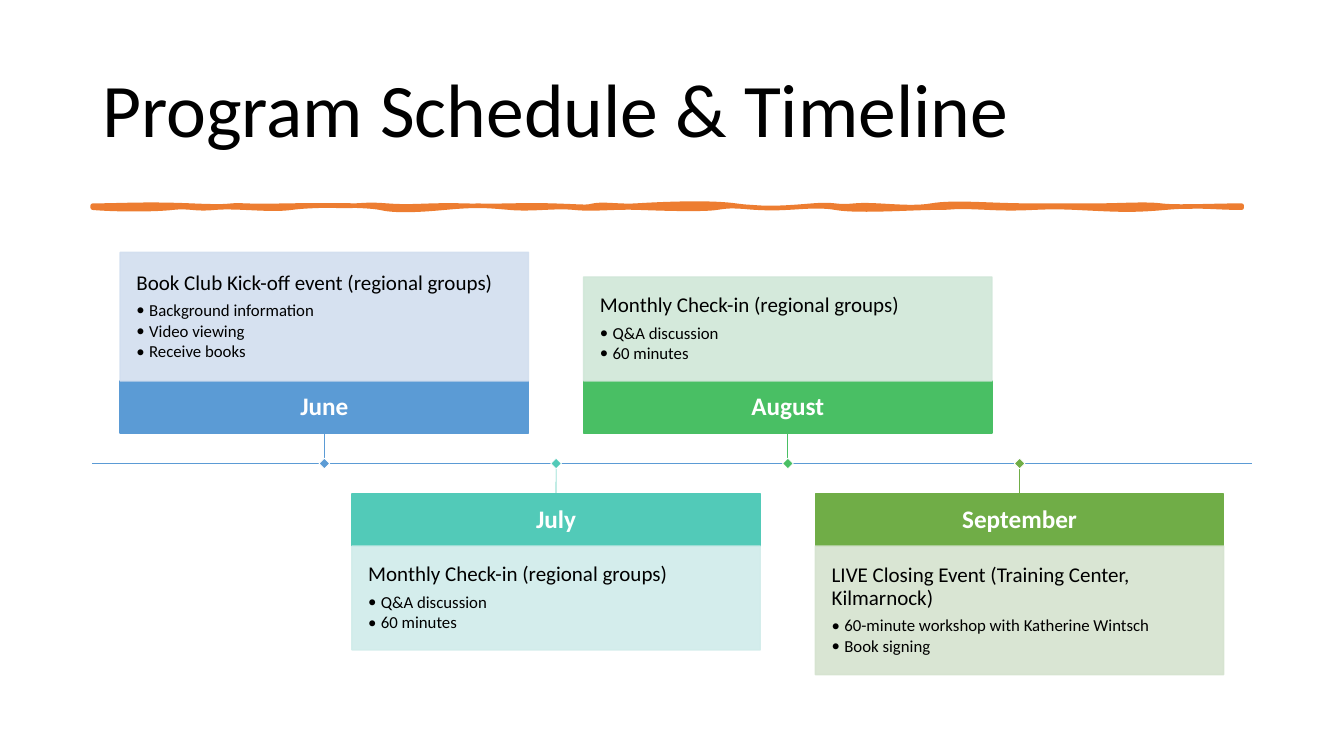
"""Build the program schedule and timeline slide."""
from dataclasses import dataclass

import lxml.etree
import pptx
import pptx.dml.color
import pptx.enum.shapes
import pptx.enum.text
import pptx.oxml.ns
import pptx.util
from pptx.util import Cm, Pt

RGB = pptx.dml.color.RGBColor
qn = pptx.oxml.ns.qn
ALIGN = pptx.enum.text.PP_ALIGN
MIDDLE = pptx.enum.text.MSO_ANCHOR.MIDDLE
RECTANGLE = pptx.enum.shapes.MSO_SHAPE.RECTANGLE
STRAIGHT = pptx.enum.shapes.MSO_CONNECTOR.STRAIGHT

FONT = "Calibri"
BLACK = RGB(0x00, 0x00, 0x00)
WHITE = RGB(0xFF, 0xFF, 0xFF)
ORANGE = RGB(0xED, 0x7D, 0x31)
BLUE = RGB(0x5B, 0x9B, 0xD5)
PALE_BLUE = RGB(0xD2, 0xDE, 0xEF)
TEAL = RGB(0x52, 0xCA, 0xB8)
PALE_TEAL = RGB(0xD0, 0xEC, 0xEA)
GREEN = RGB(0x49, 0xBF, 0x64)
PALE_GREEN = RGB(0xD0, 0xE7, 0xD8)
OLIVE = RGB(0x70, 0xAD, 0x47)
PALE_OLIVE = RGB(0xD5, 0xE3, 0xCF)

MARGIN, AXIS_WIDTH, AXIS_Y = 2.33, 29.21, 11.68
FIRST_LEFT, STEP, BOX_WIDTH = 3.03, 5.84, 10.29
MONTH_HEIGHT, STEM, MARKER = 1.31, 0.77, 0.19

BRUSH_UNIT = 0.0254
BRUSH_START = (92, 204)
BRUSH_CURVES = [
    (119, 204, 144, 202, 190, 204), (237, 206, 220, 203, 244, 204),
    (267, 205, 303, 203, 331, 204), (360, 205, 359, 202, 384, 204),
    (410, 206, 423, 203, 460, 204), (498, 205, 514, 203, 548, 204),
    (581, 205, 581, 206, 589, 204), (598, 202, 615, 205, 631, 204),
    (647, 203, 701, 200, 730, 204), (759, 208, 781, 206, 806, 204),
    (831, 202, 827, 206, 848, 204), (868, 202, 901, 208, 924, 204),
    (947, 200, 982, 204, 1023, 204), (1063, 204, 1063, 204, 1087, 204),
    (1112, 204, 1136, 202, 1152, 204), (1168, 206, 1203, 204, 1232, 204),
    (1232, 205, 1232, 205, 1232, 206), (1205, 206, 1189, 203, 1156, 206),
    (1122, 209, 1110, 208, 1068, 206), (1027, 204, 1023, 208, 981, 206),
    (939, 204, 952, 206, 928, 206), (904, 206, 851, 210, 829, 206),
    (806, 202, 782, 208, 753, 206), (724, 204, 725, 204, 711, 206),
    (698, 208, 661, 207, 635, 206), (609, 205, 590, 208, 570, 206),
    (551, 204, 528, 208, 506, 206), (483, 204, 473, 203, 441, 206),
    (409, 209, 390, 209, 377, 206), (363, 203, 310, 203, 289, 206),
    (268, 209, 235, 204, 213, 206), (192, 208, 189, 204, 171, 206),
    (154, 208, 114, 208, 92, 206),
]


@dataclass
class Event:
    month: str
    heading: str
    bullets: list[str]
    color: RGB
    tint: RGB
    detail_height: float
    above: bool


EVENTS = [
    Event("June", "Book Club Kick-off event (regional groups)",
          ["Background information", "Video viewing", "Receive books"],
          BLUE, PALE_BLUE, 3.24, True),
    Event("July", "Monthly Check-in (regional groups)",
          ["Q&A discussion", "60 minutes"], TEAL, PALE_TEAL, 2.62, False),
    Event("August", "Monthly Check-in (regional groups)",
          ["Q&A discussion", "60 minutes"], GREEN, PALE_GREEN, 2.62, True),
    Event("September", "LIVE Closing Event (Training Center, Kilmarnock)",
          ["60-minute workshop with Katherine Wintsch", "Book signing"],
          OLIVE, PALE_OLIVE, 3.24, False),
]


def drop_theme_effect(shape) -> None:
    for reference in shape._element.iter(qn("a:effectRef")):
        reference.set("idx", "0")


def paint(shape, fill: RGB, line: RGB, weight: float) -> None:
    shape.shadow.inherit = False
    drop_theme_effect(shape)
    shape.fill.solid()
    shape.fill.fore_color.rgb = fill
    shape.line.color.rgb = line
    shape.line.width = Pt(weight)


def add_box(page, left: float, top: float, width: float, height: float,
            fill: RGB, line: RGB, weight: float = 1):
    box = page.shapes.add_shape(RECTANGLE, Cm(left), Cm(top), Cm(width), Cm(height))
    paint(box, fill, line, weight)
    return box


def set_frame(frame, inset: float) -> None:
    frame.word_wrap = True
    frame.vertical_anchor = MIDDLE
    frame.margin_left = frame.margin_right = Cm(inset)
    frame.margin_top = frame.margin_bottom = Cm(inset)


def style_para(para, size: float, color: RGB, after: float = 0,
               bold: bool = False, align=ALIGN.LEFT) -> None:
    para.alignment = align
    para.line_spacing = 0.9
    para.space_after = Pt(after)
    for span in para.runs:
        span.font.name = FONT
        span.font.size = Pt(size)
        span.font.bold = bold
        span.font.color.rgb = color


def add_bullet(para) -> None:
    para.level = 1
    properties = para._p.get_or_add_pPr()
    properties.set("marL", str(Cm(0.32)))
    properties.set("indent", str(-Cm(0.32)))
    lxml.etree.SubElement(properties, qn("a:buFont")).set("typeface", FONT)
    lxml.etree.SubElement(properties, qn("a:buChar")).set("char", "•")


def add_line(page, start: tuple[float, float], end: tuple[float, float],
             color: RGB, weight: float):
    points = [Cm(value) for value in (*start, *end)]
    line = page.shapes.add_connector(STRAIGHT, *points)
    line.line.color.rgb = color
    line.line.width = Pt(weight)
    lxml.etree.SubElement(line._element.spPr, qn("a:effectLst"))
    drop_theme_effect(line)
    return line


def draw_title(page) -> None:
    box = page.shapes.add_textbox(Cm(MARGIN), Cm(1.02), Cm(AXIS_WIDTH), Cm(3.68))
    set_frame(box.text_frame, 0.25)
    box.text_frame.text = "Program Schedule & Timeline"
    style_para(box.text_frame.paragraphs[0], 54, BLACK)


def draw_brush_stroke(page) -> None:
    builder = page.shapes.build_freeform(*BRUSH_START, scale=Cm(BRUSH_UNIT))
    builder.add_line_segments([curve[4:] for curve in BRUSH_CURVES], close=True)
    stroke = builder.convert_to_shape()
    paint(stroke, ORANGE, ORANGE, 3.25)
    segments = list(stroke._element.iter(qn("a:lnTo")))
    for segment, curve in zip(segments, BRUSH_CURVES):
        bezier = lxml.etree.Element(qn("a:cubicBezTo"))
        for x, y in zip(curve[::2], curve[1::2]):
            point = lxml.etree.SubElement(bezier, qn("a:pt"))
            point.set("x", str(x - BRUSH_START[0]))
            point.set("y", str(y - BRUSH_START[1]))
        segment.getparent().replace(segment, bezier)


def draw_details(page, event: Event, left: float, top: float) -> None:
    box = add_box(page, left, top, BOX_WIDTH, event.detail_height, event.tint, event.tint)
    for color in list(box._element.spPr.iter(qn("a:srgbClr"))):
        lxml.etree.SubElement(color, qn("a:alpha")).set("val", "90000")
    frame = box.text_frame
    set_frame(frame, 0.41)
    frame.text = "\n".join([event.heading, *event.bullets])
    heading, *bullets = frame.paragraphs
    style_para(heading, 15, BLACK, 5.25)
    for para in bullets:
        style_para(para, 12, BLACK, 1.8)
        add_bullet(para)


def draw_event(page, event: Event, left: float) -> None:
    if event.above:
        month_top = AXIS_Y - STEM - MONTH_HEIGHT
        detail_top = month_top - event.detail_height
    else:
        month_top = AXIS_Y + STEM
        detail_top = month_top + MONTH_HEIGHT
    month = add_box(page, left, month_top, BOX_WIDTH, MONTH_HEIGHT, event.color, event.color)
    set_frame(month.text_frame, 0.25)
    month.text_frame.text = event.month
    style_para(month.text_frame.paragraphs[0], 18, WHITE, 5, True, ALIGN.CENTER)
    draw_details(page, event, left, detail_top)
    center = left + BOX_WIDTH / 2
    stem = add_line(page, (center, month_top), (center, AXIS_Y), event.color, 0.5)
    stem.begin_connect(month, 2 if event.above else 0)
    marker = add_box(page, center - MARKER / 2, AXIS_Y - MARKER / 2, MARKER, MARKER,
                     event.color, WHITE, 0.5)
    marker.rotation = 45


def main() -> None:
    deck = pptx.Presentation()
    deck.slide_width, deck.slide_height = Cm(33.87), Cm(19.05)
    page = deck.slides.add_slide(deck.slide_layouts[6])
    draw_title(page)
    draw_brush_stroke(page)
    add_line(page, (MARGIN, AXIS_Y), (MARGIN + AXIS_WIDTH, AXIS_Y), BLUE, 1)
    for index, event in enumerate(EVENTS):
        draw_event(page, event, FIRST_LEFT + index * STEP)
    deck.save("out.pptx")


if __name__ == "__main__":
    main()
